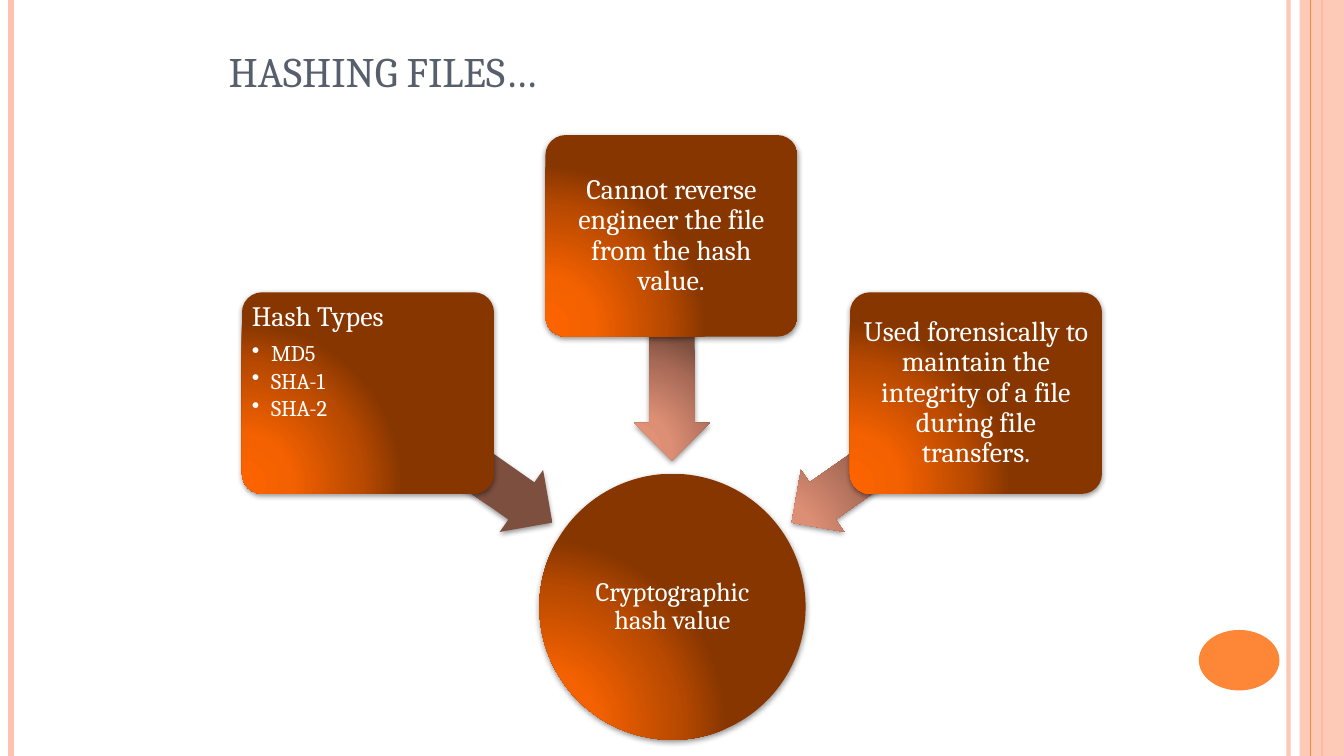
from dataclasses import dataclass

from lxml import etree
from pptx import Presentation
from pptx.dml.color import RGBColor
from pptx.enum.shapes import MSO_CONNECTOR, MSO_SHAPE
from pptx.enum.text import MSO_ANCHOR, PP_ALIGN
from pptx.oxml.ns import qn
from pptx.util import Inches, Pt

STRAIGHT = MSO_CONNECTOR.STRAIGHT
RECTANGLE, ELLIPSE = MSO_SHAPE.RECTANGLE, MSO_SHAPE.OVAL
ROUNDED, LEFT_ARROW = MSO_SHAPE.ROUNDED_RECTANGLE, MSO_SHAPE.LEFT_ARROW
TOP, MIDDLE, BOTTOM = MSO_ANCHOR.TOP, MSO_ANCHOR.MIDDLE, MSO_ANCHOR.BOTTOM
LEFT, CENTER = PP_ALIGN.LEFT, PP_ALIGN.CENTER


@dataclass(frozen=True)
class Theme:
    font: str = "Cambria"
    title: str = "575F6D"
    text: str = "FFFFFF"
    pale: str = "FEC3AE"
    orange: str = "FE8637"
    shadow: str = "000000"
    box_gradient: tuple = ("FD6400", "F46100", "B74900", "873600")
    arrow_gradient: tuple = ("E59579", "DD8F75", "A86A56", "7D4F3F")
    gradient_stops: tuple = (0, 30, 75, 100)
    title_size: int = 30
    box_size: int = 20
    circle_size: int = 19
    bullet_size: int = 16


THEME = Theme()


def add_child(parent, tag, **attributes):
    values = {name: str(value) for name, value in attributes.items()}
    return etree.SubElement(parent, qn(tag), values)


def set_alpha(fill, color, percent):
    """Fill with a solid colour of the given opacity."""
    fill.solid()
    fill.fore_color.rgb = RGBColor.from_string(color)
    if percent < 100:
        color_element = fill._xPr.find(qn("a:solidFill"))[0]
        add_child(color_element, "a:alpha", val=percent * 1000)


def set_radial_gradient(shape, colors):
    """Fill with a circular gradient that glows from the lower left."""
    shape.fill.solid()
    solid = shape._element.spPr.find(qn("a:solidFill"))
    gradient = etree.Element(qn("a:gradFill"), rotWithShape="1")
    stops = add_child(gradient, "a:gsLst")
    for position, color in zip(THEME.gradient_stops, colors):
        stop = add_child(stops, "a:gs", pos=position * 1000)
        add_child(stop, "a:srgbClr", val=color)
    circle = add_child(gradient, "a:path", path="circle")
    add_child(circle, "a:fillToRect", l=5000, t=100000, r=120000, b=10000)
    solid.getparent().replace(solid, gradient)


def set_shadow(shape):
    shape.shadow.inherit = False
    effects = shape._element.spPr.find(qn("a:effectLst"))
    shadow = add_child(effects, "a:outerShdw", blurRad=Pt(4), dist=Pt(1.6),
                       dir=90 * 60000, rotWithShape=0)
    color = add_child(shadow, "a:srgbClr", val=THEME.shadow)
    add_child(color, "a:alpha", val=42000)


def add_vertical_line(slide, x, color, width, opacity=100):
    line = slide.shapes.add_connector(
        STRAIGHT, Inches(x), Inches(0), Inches(x), Inches(7.5))
    line.line.width = Pt(width)
    set_alpha(line.line.fill, color, opacity)
    add_child(line._element.spPr, "a:effectLst")


def add_shape(slide, kind, left, top, width, height):
    shape = slide.shapes.add_shape(
        kind, Inches(left), Inches(top), Inches(width), Inches(height))
    shape.shadow.inherit = False
    shape.line.fill.background()
    return shape


def add_flat_shape(slide, kind, bounds, color, opacity=100):
    set_alpha(add_shape(slide, kind, *bounds).fill, color, opacity)


def add_glowing_shape(slide, kind, bounds, colors):
    shape = add_shape(slide, kind, *bounds)
    set_radial_gradient(shape, colors)
    set_shadow(shape)
    return shape


def set_frame(shape, anchor, inset):
    frame = shape.text_frame
    frame.word_wrap = True
    frame.vertical_anchor = anchor
    frame.margin_left = frame.margin_right = Inches(inset)
    frame.margin_top = frame.margin_bottom = Inches(inset)
    return frame


def write(paragraph, text, size, color=THEME.text, align=CENTER):
    paragraph.text = text
    paragraph.alignment = align
    paragraph.font.name = THEME.font
    paragraph.font.size = Pt(size)
    paragraph.font.color.rgb = RGBColor.from_string(color)


def write_label(paragraph, text, size, align=CENTER, after=0.35):
    write(paragraph, text, size, align=align)
    paragraph.line_spacing = 0.9
    paragraph.space_after = Pt(size * after)


def add_bullet(frame, text):
    paragraph = frame.add_paragraph()
    paragraph.level = 1
    properties = paragraph._p.get_or_add_pPr()
    properties.set("marL", str(Inches(0.19)))
    properties.set("indent", str(Inches(-0.19)))
    add_child(properties, "a:buChar", char="•")
    write_label(paragraph, text, THEME.bullet_size, LEFT, after=0.15)


def add_title(slide, text):
    box = slide.shapes.add_textbox(
        Inches(2.17), Inches(0.3), Inches(8.17), Inches(0.7))
    frame = set_frame(box, BOTTOM, 0.05)
    frame.margin_left = frame.margin_right = Inches(0.1)
    write(frame.paragraphs[0], text, THEME.title_size, THEME.title, LEFT)


def add_arrow(slide, left, top, rotation):
    arrow = add_glowing_shape(slide, LEFT_ARROW, (left, top, 2.23, 0.75),
                              THEME.arrow_gradient)
    arrow.adjustments[0] = 0.6
    arrow.adjustments[1] = 0.5
    arrow.rotation = rotation


def add_box(slide, left, top, text, bullets=()):
    box = add_glowing_shape(slide, ROUNDED, (left, top, 2.5, 2),
                            THEME.box_gradient)
    box.adjustments[0] = 0.1
    frame = set_frame(box, TOP if bullets else MIDDLE, 0.04)
    write_label(frame.paragraphs[0], text, THEME.box_size,
                LEFT if bullets else CENTER)
    for bullet in bullets:
        add_bullet(frame, bullet)


def add_circle(slide, text):
    circle = add_glowing_shape(slide, ELLIPSE, (5.35, 4.7, 2.64, 2.64),
                               THEME.box_gradient)
    frame = set_frame(circle, MIDDLE, 0.01)
    write_label(frame.paragraphs[0], text, THEME.circle_size)


def add_side_decoration(slide):
    add_vertical_line(slide, 12.78, THEME.pale, 3, opacity=93)
    add_vertical_line(slide, 0.11, THEME.pale, 4.5)
    add_vertical_line(slide, 13.11, THEME.orange, 1.5)
    add_flat_shape(slide, RECTANGLE, (12.89, 0, 0.44, 7.5), THEME.pale, 87)
    add_vertical_line(slide, 13, THEME.orange, 0.75)
    add_flat_shape(slide, ELLIPSE, (11.89, 6.25, 0.8, 0.6), THEME.orange)


def main():
    presentation = Presentation()
    presentation.slide_width = Inches(13.33)
    presentation.slide_height = Inches(7.5)
    slide = presentation.slides.add_slide(presentation.slide_layouts[6])
    add_side_decoration(slide)
    add_title(slide, "HASHING FILES…")
    add_circle(slide, "Cryptographic hash value")
    add_arrow(slide, 3.45, 4.17, 215)
    add_box(slide, 2.4, 2.9, "Hash Types", ("MD5", "SHA-1", "SHA-2"))
    add_arrow(slide, 5.55, 3.08, 270)
    add_box(slide, 5.41, 1.34,
            "Cannot reverse engineer the file from the hash value.")
    add_arrow(slide, 7.65, 4.17, 325)
    add_box(slide, 8.43, 2.9, "Used forensically to maintain the integrity "
                              "of a file during file transfers.")
    presentation.save("out.pptx")


if __name__ == "__main__":
    main()
